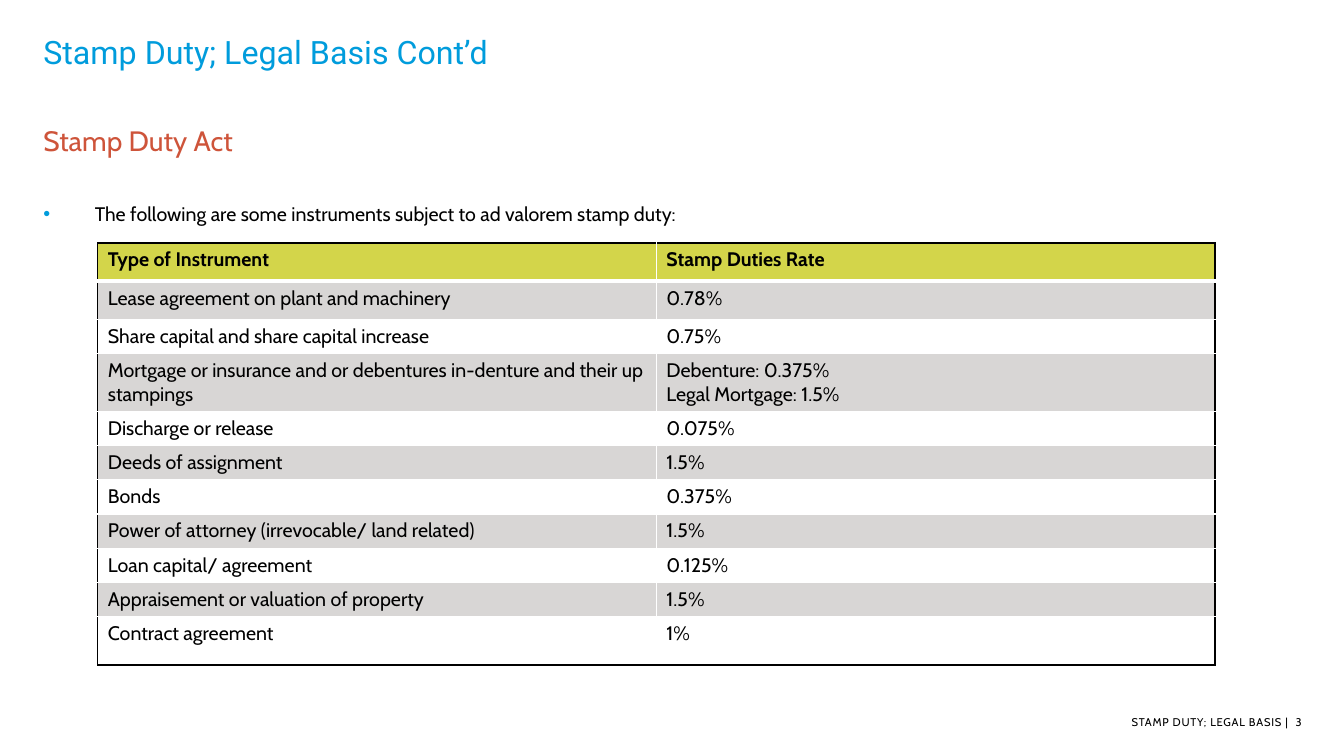
import pptx
import pptx.util
import pptx.dml.color
import pptx.enum.text
import pptx.oxml
import pptx.oxml.ns
from dataclasses import dataclass

Inches = pptx.util.Inches
Pt = pptx.util.Pt
Align = pptx.enum.text.PP_ALIGN


@dataclass(frozen=True)
class Theme:
    body: str = "Cabin"
    head: str = "Roboto"
    blue: str = "009CDC"
    red: str = "CE543A"
    lime: str = "D3D54A"
    grey: str = "D8D6D5"
    white: str = "FFFFFF"
    black: str = "000000"
    title: int = 23
    sub: int = 20
    text: int = 14
    foot: int = 8


class Deck:
    def __init__(self, theme):
        self.theme = theme
        self.file = pptx.Presentation()
        self.file.slide_width = Inches(13.33)
        self.file.slide_height = Inches(7.5)
        self.slide = self.file.slides.add_slide(self.file.slide_layouts[6])

    def color(self, code):
        return pptx.dml.color.RGBColor.from_string(code)

    def node(self, xml):
        head, tail = xml.split(" ", 1)
        space = pptx.oxml.ns.nsdecls("a")
        return pptx.oxml.parse_xml(f"{head} {space} {tail}")

    def run(self, para, words, size, color, font=None, bold=False):
        run = para.add_run()
        run.text = words
        run.font.size = Pt(size)
        run.font.name = font or self.theme.body
        run.font.bold = bold
        run.font.color.rgb = self.color(color)
        return run

    def box(self, left, top, width, height, base=0.05):
        """Add an empty text box and return its first paragraph."""
        shape = self.slide.shapes.add_textbox(
            Inches(left), Inches(top), Inches(width), Inches(height))
        frame = shape.text_frame
        frame.word_wrap = True
        frame.margin_left = frame.margin_right = frame.margin_top = 0
        frame.margin_bottom = Inches(base)
        return frame.paragraphs[0]

    def title(self, words, top, width, size, color, font=None):
        para = self.box(0.43, top, width, 0.56)
        para.line_spacing = 0.9
        self.run(para, words, size, color, font)

    def bullet(self, words):
        para = self.box(0.43, 2, 12.48, 4.72, base=0)
        para.alignment = Align.JUSTIFY
        props = para._p.get_or_add_pPr()
        dent = Inches(0.51)
        props.set("marL", str(dent))
        props.set("indent", str(-dent))
        props.append(self.node(
            f'<a:buClr ><a:srgbClr val="{self.theme.blue}"/></a:buClr>'))
        props.append(self.node('<a:buFont typeface="Arial"/>'))
        props.append(self.node('<a:buChar char="•"/>'))
        self.run(para, words, self.theme.text, self.theme.black)

    def edge(self, cell, side, color, width):
        cell._tc.get_or_add_tcPr().append(self.node(
            f'<a:ln{side} w="{Pt(width)}"><a:solidFill>'
            f'<a:srgbClr val="{color}"/></a:solidFill></a:ln{side}>'))

    def cell(self, cell, words, fill, sides, bold):
        for side, (color, width) in sides.items():
            self.edge(cell, side, color, width)
        cell.fill.solid()
        cell.fill.fore_color.rgb = self.color(fill)
        frame = cell.text_frame
        for num, line in enumerate(words.split("\n")):
            para = frame.add_paragraph() if num else frame.paragraphs[0]
            self.run(para, line, self.theme.text, self.theme.black, bold=bold)

    def table(self, rows, highs):
        look = self.theme
        wide = 5.54
        grid = self.slide.shapes.add_table(
            len(rows), 2, Inches(0.97), Inches(2.41),
            Inches(2 * wide), Inches(sum(highs))).table
        for col in grid.columns:
            col.width = Inches(wide)
        last = len(rows) - 1
        dark, light = (look.black, 1), (look.white, 1)
        thick = (look.white, 3)
        for num, (row, high) in enumerate(zip(rows, highs)):
            grid.rows[num].height = Inches(high)
            fill = look.grey if num % 2 else look.white
            if num == 0:
                fill = look.lime
            for col, words in enumerate(row):
                # Black outer frame, white inner lines, thick under the header
                sides = {
                    "L": light if col else dark,
                    "R": dark if col else light,
                    "T": (dark, thick)[num] if num < 2 else light,
                    "B": thick if num == 0 else dark if num == last else light,
                }
                self.cell(grid.cell(num, col), words, fill, sides, num == 0)

    def footer(self, words, page):
        para = self.box(6.93, 7.1, 5.98, 0.19)
        para.alignment = Align.RIGHT
        label = self.run(para, words, self.theme.foot, self.theme.black)
        label._r.get_or_add_rPr().set("spc", "50")
        self.run(para, page, self.theme.foot, self.theme.black)


ROWS = [
    ("Type of Instrument", "Stamp Duties Rate"),
    ("Lease agreement on plant and machinery", "0.78%"),
    ("Share capital and share capital increase", "0.75%"),
    ("Mortgage or insurance and or debentures in-denture and their up stampings",
     "Debenture: 0.375%\nLegal Mortgage: 1.5%"),
    ("Discharge or release", "0.075%"),
    ("Deeds of assignment", "1.5%"),
    ("Bonds", "0.375%"),
    ("Power of attorney (irrevocable/ land related)", "1.5%"),
    ("Loan capital/ agreement", "0.125%"),
    ("Appraisement or valuation of property", "1.5%"),
    ("Contract agreement", "1%"),
]
HIGHS = [0.38, 0.38, 0.34, 0.57] + [0.34] * 6 + [0.48]


def main():
    look = Theme()
    deck = Deck(look)

    # Footer
    deck.footer("STAMP DUTY; LEGAL BASIS |  ", "3")

    # Headings
    deck.title("Stamp Duty; Legal Basis Cont’d", 0.36, 8.69,
               look.title, look.blue, look.head)
    deck.title("Stamp Duty Act", 1.26, 10.06, look.sub, look.red)

    # Lead-in and rates
    deck.bullet("The following are some instruments subject to "
                "ad valorem stamp duty:")
    deck.table(ROWS, HIGHS)

    deck.file.save("out.pptx")


if __name__ == "__main__":
    main()
